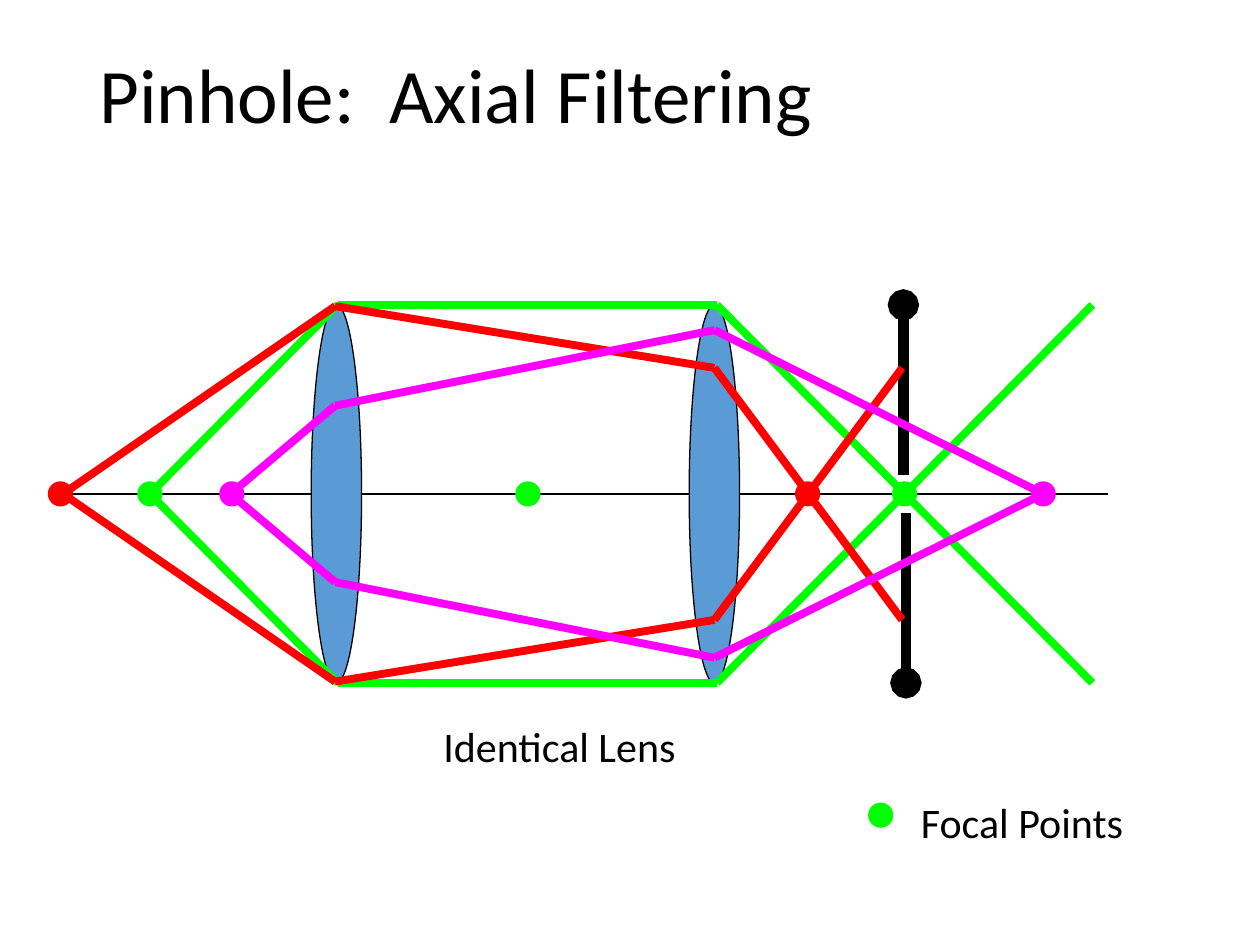
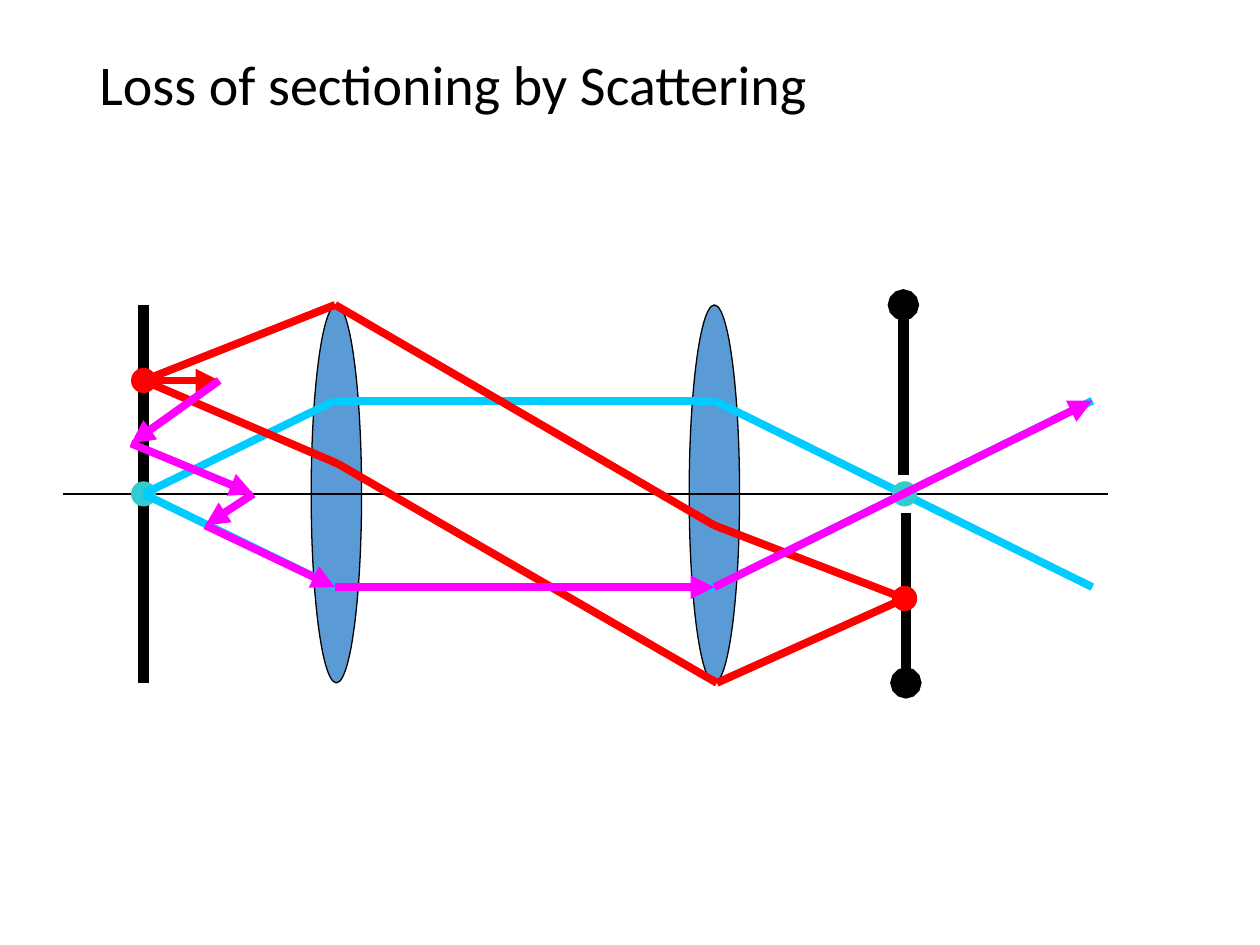
from itertools import pairwise

from lxml import etree
from pptx import Presentation
from pptx.dml.color import RGBColor
from pptx.enum import shapes, text
from pptx.oxml import ns
from pptx.util import Inches, Pt

BLACK = RGBColor(0x00, 0x00, 0x00)
LENS_BLUE = RGBColor(0x5B, 0x9B, 0xD5)
GREEN = RGBColor(0x00, 0xFF, 0x00)
RED = RGBColor(0xFF, 0x00, 0x00)
MAGENTA = RGBColor(0xFF, 0x00, 0xFF)
CYAN = RGBColor(0x00, 0xCC, 0xFF)
TEAL = RGBColor(0x33, 0xCC, 0xCC)
FONT = "Calibri"

# Slide grid: 10 columns by 7.5 rows; boxes are left, top, width, height
COLUMNS, ROWS = 10, 7.5
CELL = Inches(1)
TITLE_BOX = (0.69, 0.4, 8.62, 1.45)
BENCH_BOX = (0.5, 2.42, 8.29, 3)
LENS_LABEL_BOX = (3.42, 5.67, 2.07, 0.5)
LEGEND_BOX = (6.89, 6.27, 2.14, 0.5)

# Stations along the bench, in columns from its left edge
LENSES = (2.17, 5.17)
PINHOLE = 6.68
SCREEN = 8.17
SAMPLE = 0.64
LENS_WIDTH, DOT, GAP = 0.4, 0.2, 0.15
RAY_WIDTH, STOP_WIDTH = 4.5, 6


def cells(*lengths):
    return [round(length * CELL) for length in lengths]


def write(slide, box, words, size, wrap=False, spacing=1.0):
    frame = slide.shapes.add_textbox(*cells(*box)).text_frame
    frame.word_wrap = wrap
    frame.vertical_anchor = text.MSO_ANCHOR.TOP
    line = frame.paragraphs[0]
    line.line_spacing = spacing
    run = line.add_run()
    run.text = words
    run.font.name, run.font.size = FONT, Pt(size)
    run.font.color.rgb = BLACK


def ellipse(slide, center, width, height, fill, outlined=False):
    x, y = center
    oval = slide.shapes.add_shape(
        shapes.MSO_SHAPE.OVAL,
        *cells(x - width / 2, y - height / 2, width, height))
    oval.shadow.inherit = False
    oval.fill.solid()
    oval.fill.fore_color.rgb = fill
    if outlined:
        oval.line.color.rgb = BLACK
        oval.line.width = Pt(0.75)
    else:
        oval.line.fill.background()


def segment(slide, start, end, color, width, tip=None):
    stroke = slide.shapes.add_connector(
        shapes.MSO_CONNECTOR.STRAIGHT, *cells(*start, *end))
    stroke.line.color.rgb = color
    stroke.line.width = Pt(width)
    if tip:
        etree.SubElement(stroke.line._get_or_add_ln(),
                         ns.qn("a:tailEnd"), type=tip)
    etree.SubElement(stroke._element.spPr, ns.qn("a:effectLst"))


class Bench:
    """Optical bench; points are (columns from its left, rows above its axis)."""

    def __init__(self, slide, box):
        self.slide = slide
        self.left, top, self.width, self.height = box
        self.reach = self.height / 2
        self.axis_row = top + self.reach

    def at(self, point):
        return self.left + point[0], self.axis_row - point[1]

    def axis(self):
        self.path_of([(0, 0), (self.width, 0)], BLACK, 1.5)

    def lenses(self):
        for station in LENSES:
            ellipse(self.slide, self.at((station, 0)), LENS_WIDTH,
                    self.height, LENS_BLUE, outlined=True)

    def pinhole(self):
        for side, station in ((1, PINHOLE - 0.01), (-1, PINHOLE + 0.01)):
            self.path_of([(station, side * GAP), (station, side * self.reach)],
                         BLACK, STOP_WIDTH, "oval")

    def path_of(self, points, color, width=RAY_WIDTH, tip=None):
        for start, end in pairwise(points):
            segment(self.slide, self.at(start), self.at(end), color, width, tip)

    def mirrored_rays(self, points, color):
        for side in (-1, 1):
            self.path_of([(x, side * h) for x, h in points], color)

    def dots(self, color, *points):
        for point in points:
            ellipse(self.slide, self.at(point), DOT, DOT, color)


def focal_legend(slide, box):
    left, top, width, height = box
    ellipse(slide, (left + DOT / 2, top + DOT), DOT, DOT, GREEN)
    indent = 0.32
    write(slide, (left + indent, top, width - indent, height),
          "Focal Points", 24)


def axial_filtering(slide, box):
    bench = Bench(slide, box)
    bench.axis()
    bench.lenses()
    bench.pinhole()

    # In focus: collimated between the lenses, crossing in the pinhole
    bench.mirrored_rays([(0.69, 0), (2.18, 1.5), (5.19, 1.5),
                         (SCREEN, -1.5)], GREEN)
    bench.dots(RED, (-0.02, 0))
    bench.dots(GREEN, (0.69, 0), (3.69, 0), (PINHOLE, 0))
    bench.dots(MAGENTA, (1.34, 0))

    # Too far: crossing before the pinhole
    bench.mirrored_rays([(0, 0), (2.16, 1.49), (5.17, 1), (6.66, -1)], RED)
    bench.dots(RED, (5.91, 0))

    # Too near: meeting behind the pinhole
    bench.mirrored_rays([(1.33, 0), (2.16, 0.7), (5.17, 1.3),
                         (7.78, 0)], MAGENTA)
    bench.dots(MAGENTA, (7.78, 0))


def scattering(slide, box):
    bench = Bench(slide, box)
    bench.lenses()
    bench.pinhole()
    bench.path_of([(SAMPLE, -bench.reach), (SAMPLE, bench.reach)],
                  BLACK, STOP_WIDTH)
    bench.axis()
    on_axis, off_axis = (SAMPLE, 0), (SAMPLE, 0.9)
    bench.dots(TEAL, on_axis)
    bench.dots(RED, off_axis)

    # Light from the axis passes the pinhole
    height = 0.74
    bench.mirrored_rays([on_axis, (2.16, height), (5.17, height),
                         (SCREEN, -height)], CYAN)
    bench.dots(TEAL, (PINHOLE, 0))

    # Light from off the axis is blocked by the stop
    blocked = (PINHOLE, -0.83)
    bench.path_of([off_axis, (2.16, 1.5), (5.17, -0.25), blocked], RED)
    bench.path_of([off_axis, (2.18, 0.24), (5.19, -1.5), blocked], RED)
    bench.dots(RED, blocked)

    # Scattered light joins the on-axis path
    first_hit = (1.24, 0.9)
    bench.path_of([off_axis, first_hit], RED, tip="triangle")
    bench.path_of([first_hit, (0.54, 0.4), (1.51, 0), (1.13, -0.25),
                   (2.16, -height), (5.17, -height), (SCREEN, height)],
                  MAGENTA, tip="triangle")


def add_slide(deck, title, size):
    slide = deck.slides.add_slide(deck.slide_layouts[6])
    write(slide, TITLE_BOX, title, size, wrap=True, spacing=0.9)
    return slide


def main():
    deck = Presentation()
    deck.slide_width, deck.slide_height = cells(COLUMNS, ROWS)

    filtering = add_slide(deck, "Pinhole:  Axial Filtering", 44)
    axial_filtering(filtering, BENCH_BOX)
    focal_legend(filtering, LEGEND_BOX)
    write(filtering, LENS_LABEL_BOX, "Identical Lens", 24)

    loss = add_slide(deck, "Loss of sectioning by Scattering", 32)
    scattering(loss, BENCH_BOX)

    deck.save("out.pptx")


if __name__ == "__main__":
    main()
